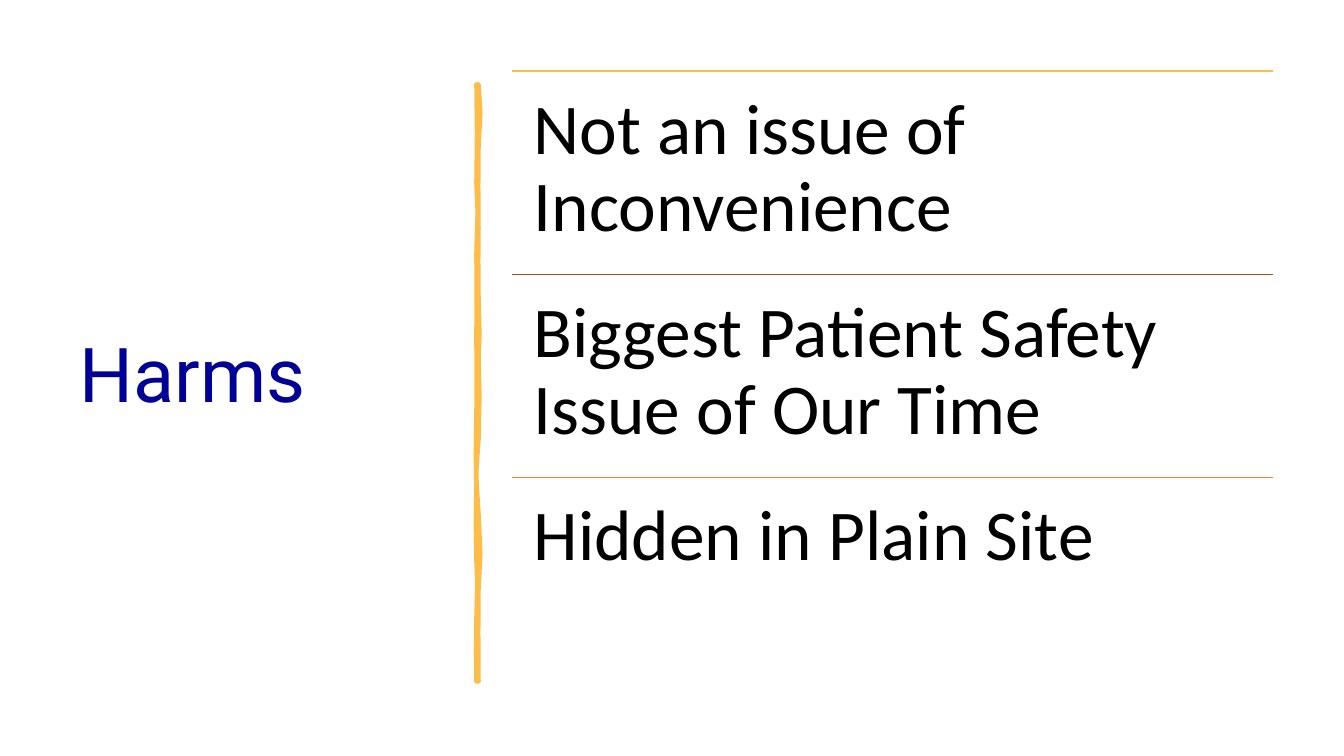
from lxml.etree import SubElement
from pptx import Presentation
from pptx.dml.color import RGBColor
from pptx.enum.shapes import MSO_CONNECTOR
from pptx.enum.text import MSO_ANCHOR, MSO_AUTO_SIZE, PP_ALIGN
from pptx.oxml.ns import qn
from pptx.util import Cm, Pt

NAVY = RGBColor(0x00, 0x00, 0x99)
BLACK = RGBColor(0x00, 0x00, 0x00)
AMBER = RGBColor(0xFF, 0xBD, 0x47)
RUST = RGBColor(0xB6, 0x49, 0x26)
ORANGE = RGBColor(0xFF, 0x84, 0x27)

TITLE = "Harms"
HARMS = [
    ("Not an issue of Inconvenience", AMBER),
    ("Biggest Patient Safety Issue of Our Time", RUST),
    ("Hidden in Plain Site", ORANGE),
]
LIST_LEFT, LIST_TOP, LIST_WIDTH, ROW_HEIGHT = 12.91, 1.79, 19.18, 5.12
INSET = 0.54

STROKE_START = (12.06, 2.13)
STROKE_CURVES = [
    ((12.12, 2.59), (12.12, 3.02), (12.06, 3.71)),
    ((12.01, 4.39), (12.09, 4.95), (12.06, 5.74)),
    ((12.04, 6.53), (12.06, 6.65), (12.06, 7.47)),
    ((12.06, 8.26), (12.12, 8.69), (12.06, 9.04)),
    ((12.01, 9.4), (12.17, 10.52), (12.06, 11.07)),
    ((11.96, 11.61), (11.99, 12.29), (12.06, 12.95)),
    ((12.12, 13.61), (12.12, 14.33), (12.06, 14.83)),
    ((12.01, 15.32), (12.09, 16.51), (12.06, 17.17)),
    ((12.04, 17.17), (12.01, 17.17), (12.01, 17.17)),
    ((12.04, 16.41), (11.96, 16.36), (12.01, 15.57)),
    ((12.04, 14.81), (12.04, 14.48), (12.01, 14.15)),
    ((11.99, 13.82), (11.99, 12.57), (12.01, 12.12)),
    ((12.01, 11.66), (11.96, 11.3), (12.01, 10.54)),
    ((12.04, 9.8), (11.99, 9.47), (12.01, 8.51)),
    ((12.04, 7.57), (11.99, 7.14), (12.01, 6.35)),
    ((12.04, 5.54), (12.06, 5.08), (12.01, 4.6)),
    ((11.94, 4.14), (12.12, 2.64), (12.01, 2.13)),
]
STEPS = 2


def write(tf, text, font, size, color, inset_x, inset_y, anchor):
    """Put one formatted paragraph in a text frame."""
    tf.word_wrap = True
    tf.auto_size = MSO_AUTO_SIZE.NONE
    tf.vertical_anchor = anchor
    tf.margin_left = tf.margin_right = Cm(inset_x)
    tf.margin_top = tf.margin_bottom = Cm(inset_y)
    p = tf.paragraphs[0]
    p.alignment = PP_ALIGN.LEFT
    p.line_spacing = 0.9
    r = p.add_run()
    r.text = text
    r.font.name = font
    r.font.size = Pt(size)
    r.font.color.rgb = color


def curve_points(start, curves):
    """Return points along a chain of cubic curves."""
    points = []
    for c1, c2, end in curves:
        for step in range(1, STEPS + 1):
            t = step / STEPS
            u = 1 - t
            points.append(tuple(
                Cm(u**3 * a + 3 * u * u * t * b + 3 * u * t * t * c + t**3 * d)
                for a, b, c, d in zip(start, c1, c2, end)))
        start = end
    return points


def add_brush_stroke(s):
    """Draw the hand-drawn vertical divider."""
    x, y = STROKE_START
    builder = s.shapes.build_freeform(Cm(x), Cm(y))
    builder.add_line_segments(curve_points(STROKE_START, STROKE_CURVES))
    sp = builder.convert_to_shape()
    sp.shadow.inherit = False
    sp.fill.solid()
    sp.fill.fore_color.rgb = AMBER
    sp.line.color.rgb = AMBER
    sp.line.width = Pt(3.25)


def add_row(s, index, text, color):
    """Add one ruled statement of the list."""
    top = Cm(LIST_TOP + index * ROW_HEIGHT)
    left, width = Cm(LIST_LEFT), Cm(LIST_WIDTH)
    rule = s.shapes.add_connector(
        MSO_CONNECTOR.STRAIGHT, left, top, left + width, top)
    rule.line.color.rgb = color
    rule.line.width = Pt(1)
    SubElement(rule._element.spPr, qn("a:effectLst"))
    sp = s.shapes.add_textbox(left, top, width, Cm(ROW_HEIGHT))
    write(sp.text_frame, text, font="Calibri", size=51, color=BLACK,
          inset_x=INSET, inset_y=INSET, anchor=MSO_ANCHOR.TOP)


def main():
    """Build the slide and save it."""
    prs = Presentation()
    prs.slide_width, prs.slide_height = Cm(33.87), Cm(19.05)
    s = prs.slides.add_slide(prs.slide_layouts[5])
    title = s.shapes.title
    title.left, title.top = Cm(1.76), Cm(1.77)
    title.width, title.height = Cm(9.5), Cm(15.52)
    write(title.text_frame, TITLE, font="Roboto", size=54, color=NAVY,
          inset_x=0.25, inset_y=0.13, anchor=MSO_ANCHOR.MIDDLE)
    add_brush_stroke(s)
    for index, (text, color) in enumerate(HARMS):
        add_row(s, index, text, color)
    prs.save("out.pptx")


if __name__ == "__main__":
    main()
